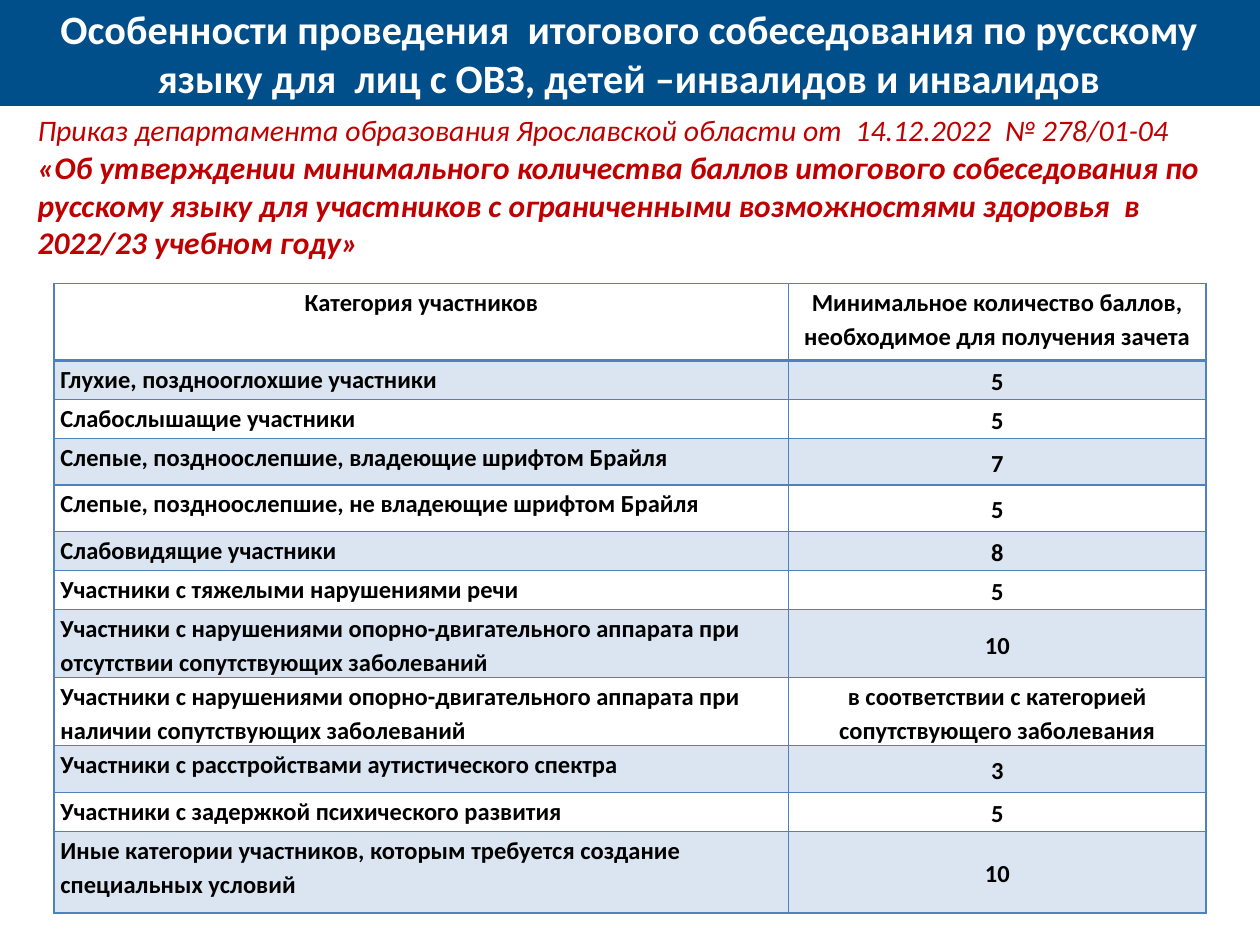
from dataclasses import dataclass

from lxml import etree
from pptx import Presentation
from pptx.dml.color import RGBColor
from pptx.enum import shapes, text
from pptx.oxml import ns
from pptx.util import Emu, Inches, Pt

COLUMNS, ROWS = 1000, 750
WIDTH, HEIGHT = Inches(10), Inches(7.5)
FONT = "Calibri"
WHITE, BLACK, NAVY, RED, BLUE = "FFFFFF", "000000", "004F8A", "C00000", "4F81BD"
CENTER, LEFT = text.PP_ALIGN.CENTER, text.PP_ALIGN.LEFT


@dataclass(frozen=True)
class Area:
    column: int
    row: int
    columns: int
    rows: int

    def place(self) -> tuple[Emu, Emu, Emu, Emu]:
        return across(self.column), down(self.row), across(self.columns), down(self.rows)


@dataclass(frozen=True)
class Style:
    size: float
    color: str
    bold: bool = False
    italic: bool = False


@dataclass(frozen=True)
class Category:
    name: str
    score: str
    rows: int


TITLE = Style(23, WHITE, bold=True)
ORDER = Style(17, RED, italic=True)
SUBJECT = Style(18, RED, bold=True, italic=True)
CELL = Style(14, BLACK, bold=True)

HEADER = Category("Категория участников",
                  "Минимальное количество баллов, необходимое для получения зачета", 61)
CATEGORIES = [
    Category("Глухие, позднооглохшие участники", "5", 31),
    Category("Слабослышащие участники", "5", 31),
    Category("Слепые, поздноослепшие, владеющие шрифтом Брайля", "7", 37),
    Category("Слепые, поздноослепшие, не владеющие шрифтом Брайля", "5", 37),
    Category("Слабовидящие участники", "8", 31),
    Category("Участники с тяжелыми нарушениями речи", "5", 31),
    Category("Участники с нарушениями опорно-двигательного аппарата при "
             "отсутствии сопутствующих заболеваний", "10", 54),
    Category("Участники с нарушениями опорно-двигательного аппарата при "
             "наличии сопутствующих заболеваний",
             "в соответствии с категорией сопутствующего заболевания", 54),
    Category("Участники с расстройствами аутистического спектра", "3", 37),
    Category("Участники с задержкой психического развития", "5", 31),
    Category("Иные категории участников, которым требуется создание "
             "специальных условий", "10", 65),
]


def across(columns: float) -> Emu:
    return Emu(int(WIDTH * columns / COLUMNS))


def down(rows: float) -> Emu:
    return Emu(int(HEIGHT * rows / ROWS))


def paint(color_format, color: str) -> None:
    color_format.rgb = RGBColor.from_string(color)


def write(para, words: str, style: Style, align=LEFT) -> None:
    para.alignment = align
    span = para.add_run()
    span.text = words
    span.font.name = FONT
    span.font.size = Pt(style.size)
    span.font.bold = style.bold
    span.font.italic = style.italic
    paint(span.font.color, style.color)


def draw_title(page, area: Area, words: str) -> None:
    box = page.shapes.add_shape(shapes.MSO_SHAPE.RECTANGLE, *area.place())
    box.shadow.inherit = False
    box.fill.solid()
    paint(box.fill.fore_color, NAVY)
    box.line.fill.background()
    box.text_frame.word_wrap = True
    box.text_frame.vertical_anchor = text.MSO_ANCHOR.MIDDLE
    write(box.text_frame.paragraphs[0], words, TITLE, CENTER)


def draw_order(page, area: Area, order: str, subject: str) -> None:
    frame = page.shapes.add_textbox(*area.place()).text_frame
    frame.word_wrap = True
    frame.auto_size = text.MSO_AUTO_SIZE.SHAPE_TO_FIT_TEXT
    write(frame.paragraphs[0], order, ORDER)
    write(frame.add_paragraph(), subject, SUBJECT)


def tint(cell, color: str, percent: int) -> None:
    cell.fill.solid()
    paint(cell.fill.fore_color, color)
    shade = next(cell.fill._xPr.iter(ns.qn("a:srgbClr")))
    etree.SubElement(shade, ns.qn("a:alpha"), val=str(percent * 1000))


def border(cell, top: float, bottom: float) -> None:
    widths = {"a:lnL": 1, "a:lnR": 1, "a:lnT": top, "a:lnB": bottom}
    properties = cell._tc.get_or_add_tcPr()
    for position, (side, width) in enumerate(widths.items()):
        line = etree.Element(ns.qn(side), w=str(Pt(width)))
        fill = etree.SubElement(line, ns.qn("a:solidFill"))
        etree.SubElement(fill, ns.qn("a:srgbClr"), val=BLUE)
        properties.insert(position, line)


def fill_cell(cell, words: str, align, middle: bool, row: int) -> None:
    cell.margin_left = cell.margin_right = across(5)
    cell.margin_top = cell.margin_bottom = 0
    cell.vertical_anchor = text.MSO_ANCHOR.MIDDLE if middle else text.MSO_ANCHOR.TOP
    para = cell.text_frame.paragraphs[0]
    para.line_spacing = 1.15
    write(para, words, CELL, align)
    if row % 2:
        tint(cell, BLUE, 20)
    else:
        cell.fill.background()
    border(cell, top=2 if row == 1 else 1, bottom=2 if row == 0 else 1)


def draw_scores(page, area: Area, widths: list[int], entries: list[Category]) -> None:
    table = page.shapes.add_table(len(entries), len(widths), *area.place()).table
    table.horz_banding = False
    for column, width in zip(table.columns, widths):
        column.width = across(width)
    for row, entry in enumerate(entries):
        table.rows[row].height = down(entry.rows)
        fill_cell(table.cell(row, 0), entry.name, LEFT if row else CENTER, False, row)
        fill_cell(table.cell(row, 1), entry.score, CENTER, row > 0, row)


def main() -> None:
    deck = Presentation()
    deck.slide_width, deck.slide_height = WIDTH, HEIGHT
    page = deck.slides.add_slide(deck.slide_layouts[6])
    draw_title(page, Area(0, 0, COLUMNS, 84),
               "Особенности проведения  итогового собеседования по русскому языку "
               "для  лиц с ОВЗ, детей –инвалидов и инвалидов")
    draw_order(page, Area(20, 84, 969, 131),
               "Приказ департамента образования Ярославской области от  14.12.2022  № 278/01-04",
               "«Об утверждении минимального количества баллов итогового собеседования "
               "по русскому языку для участников с ограниченными возможностями здоровья  "
               "в 2022/23 учебном году»")
    draw_scores(page, Area(43, 225, 914, 496), [583, 331], [HEADER, *CATEGORIES])
    deck.save("out.pptx")


if __name__ == "__main__":
    main()
